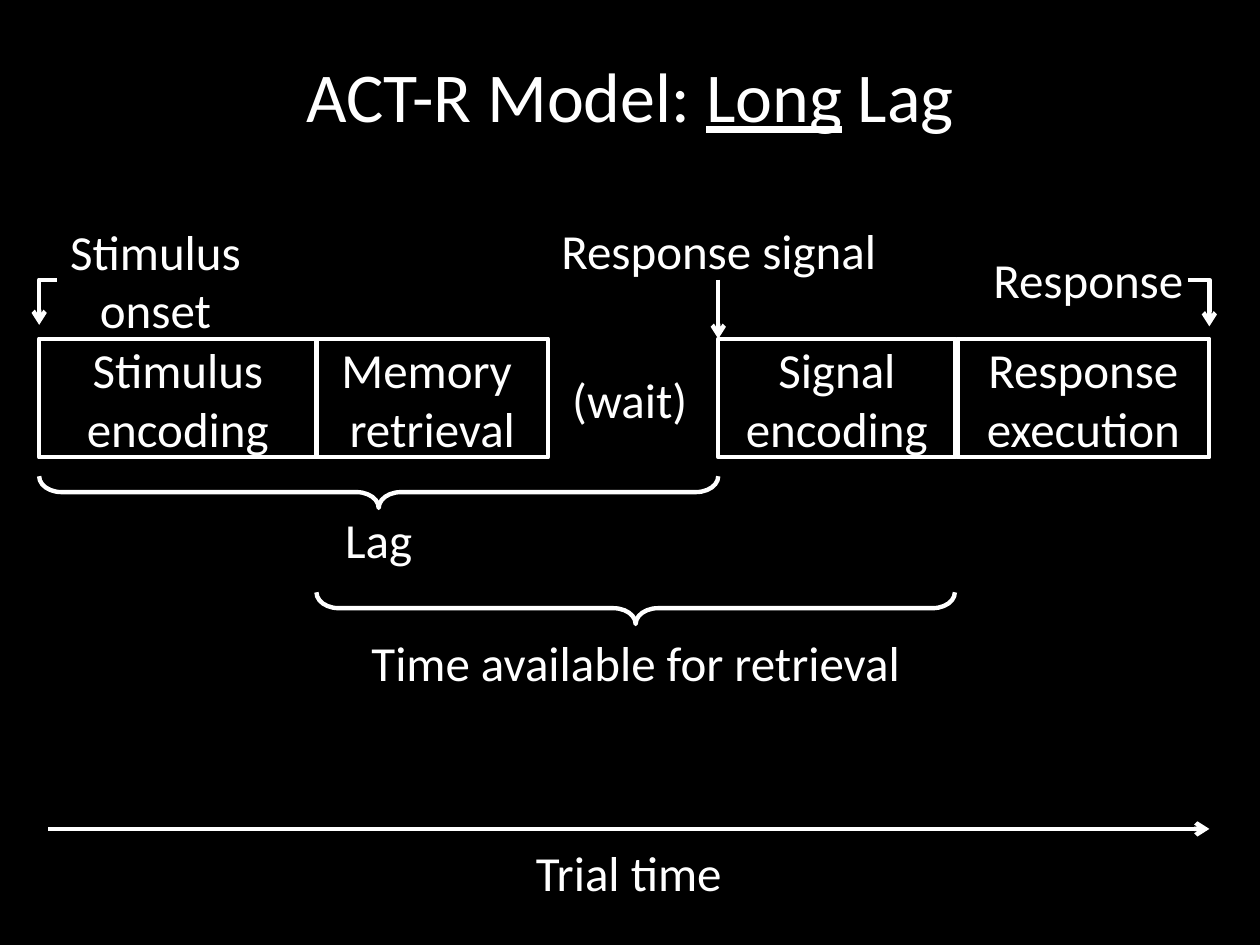
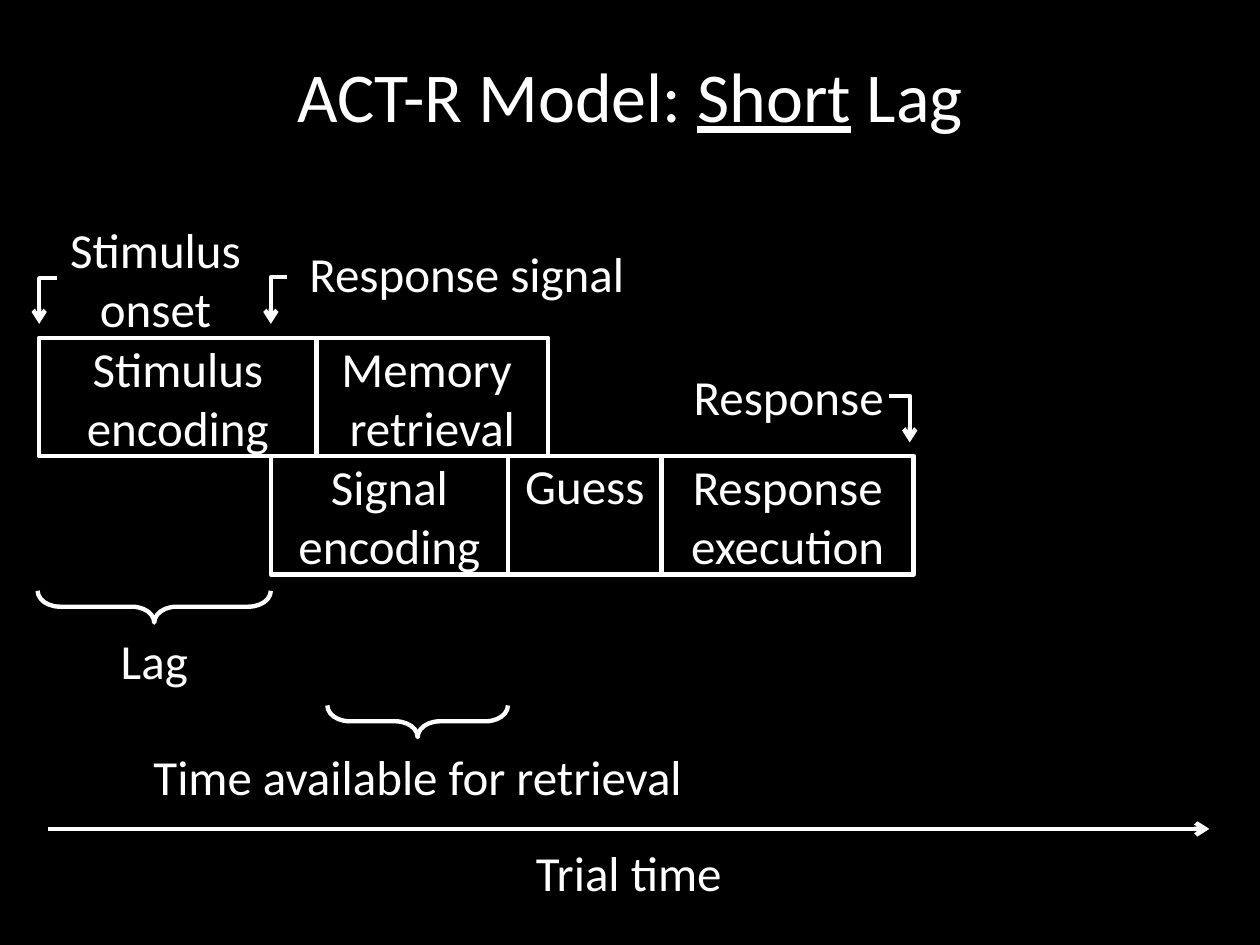
"""Build two slides that show the trial timeline of a long and a short lag."""
from dataclasses import dataclass

from lxml import etree
from pptx import Presentation
from pptx.dml.color import RGBColor
from pptx.enum.shapes import MSO_CONNECTOR, MSO_SHAPE
from pptx.enum.text import MSO_ANCHOR, PP_ALIGN
from pptx.oxml.ns import qn
from pptx.util import Cm, Pt

RECT = MSO_SHAPE.RECTANGLE
BRACE = MSO_SHAPE.LEFT_BRACE
STRAIGHT, ELBOW = MSO_CONNECTOR.STRAIGHT, MSO_CONNECTOR.ELBOW
TOP, MIDDLE = MSO_ANCHOR.TOP, MSO_ANCHOR.MIDDLE
CENTER = PP_ALIGN.CENTER


@dataclass(frozen=True)
class Theme:
    """Colours, font and sizes of the deck."""
    back: RGBColor = RGBColor(0, 0, 0)
    ink: RGBColor = RGBColor(255, 255, 255)
    font: str = "Calibri"
    title: Pt = Pt(40)
    body: Pt = Pt(28)
    line: Pt = Pt(2.5)


THEME = Theme()
WIDE, HIGH = 25.4, 19.05
ROW, LINE, DEPTH = 2.39, 1.19, 0.64
EDGE, END = 0.79, 24.38

STIM = ("Stimulus encoding", 5.59)
RECALL = ("Memory \nretrieval", 4.67)
SIGNAL = ("Signal encoding", 4.78)
GUESS = ("Guess", 3.1)
REPLY = ("Response execution", 5.08)
LAG = ("Lag", 2.11)
SPAN = ("Time available for retrieval", 12.34)

AXIS = (0.97, 16.71, END, 16.71)
TIME = ("Trial time", 9.68, 16.99, 5.99, LINE)

SLIDES = [
    {
        "word": "Long",
        "rows": [
            (EDGE, 6.83, [STIM, RECALL]),
            (14.48, 6.83, [SIGNAL]),
            (19.3, 6.83, [REPLY]),
        ],
        "notes": [
            ("(wait)", 11.07, 7.44, 3.25, LINE),
            ("Stimulus onset", 1.14, 4.45, 3.99, ROW),
            ("Response", 19.91, 5.03, 4.06, LINE),
            ("Response signal", 11.25, 4.45, 6.48, LINE),
        ],
        "arrows": [
            (1.14, 5.64, EDGE, 6.55),
            (23.95, 5.64, END, 6.58),
            (14.48, 5.64, 14.48, 6.83),
        ],
        "braces": [
            (LAG, EDGE, 14.48, 9.6, 10.26),
            (SPAN, 6.38, 19.25, 11.94, 12.75),
        ],
    },
    {
        "word": "Short",
        "rows": [
            (EDGE, 6.81, [STIM, RECALL]),
            (5.46, 9.19, [SIGNAL, GUESS, REPLY]),
        ],
        "notes": [
            ("Stimulus onset", 1.14, 4.42, 3.99, ROW),
            ("Response", 13.87, 7.39, 4.06, LINE),
            ("Response signal", 6.17, 4.9, 6.48, LINE),
        ],
        "arrows": [
            (1.14, 5.61, EDGE, 6.53),
            (17.93, 7.98, 18.34, 8.92),
            (5.79, 5.59, 5.46, 6.53),
        ],
        "braces": [
            (LAG, 0.76, 5.46, 11.91, 12.7),
            (SPAN, 6.6, 10.24, 14.22, 15.04),
        ],
    },
]


def add_run(para, text, size, under=None):
    run = para.add_run()
    run.text = text
    run.font.name = THEME.font
    run.font.size = size
    run.font.color.rgb = THEME.ink
    run.font.underline = under


def fill_text(shape, text, anchor=MIDDLE):
    frame = shape.text_frame
    frame.word_wrap = True
    frame.vertical_anchor = anchor
    frame.margin_left = frame.margin_right = 0
    frame.margin_top = frame.margin_bottom = 0
    for i, part in enumerate(text.split("\n")):
        para = frame.add_paragraph() if i else frame.paragraphs[0]
        para.alignment = CENTER
        add_run(para, part, THEME.body)


def add_title(slide, word):
    box = slide.shapes.add_textbox(Cm(1.27), Cm(0.76), Cm(22.86), Cm(2.29))
    frame = box.text_frame
    frame.word_wrap = True
    frame.vertical_anchor = MIDDLE
    para = frame.paragraphs[0]
    para.alignment = CENTER
    add_run(para, "ACT-R Model: ", THEME.title)
    add_run(para, word, THEME.title, True)
    add_run(para, " Lag", THEME.title)


def add_note(slide, text, left, top, wide, high):
    box = slide.shapes.add_textbox(Cm(left), Cm(top), Cm(wide), Cm(high))
    fill_text(box, text)


def add_form(slide, kind, left, top, wide, high):
    form = slide.shapes.add_shape(kind, Cm(left), Cm(top), Cm(wide), Cm(high))
    form.shadow.inherit = False
    form.fill.background()
    form.line.color.rgb = THEME.ink
    form.line.width = THEME.line
    return form


def add_row(slide, left, top, stages):
    for stage in stages:
        text, wide = stage
        box = add_form(slide, RECT, left, top, wide, ROW)
        fill_text(box, text, TOP if stage is GUESS else MIDDLE)
        left += wide


def add_brace(slide, label, left, right, top, below):
    text, wide = label
    mid, size = (left + right) / 2, right - left
    brace = add_form(slide, BRACE, mid - DEPTH / 2,
                     top + (DEPTH - size) / 2, DEPTH, size)
    brace.rotation = 270
    brace.adjustments[0] = 0.7
    add_note(slide, text, mid - wide / 2, below, wide, LINE)


def add_arrow(slide, x1, y1, x2, y2):
    bent = x1 != x2 and y1 != y2
    back = bent and x2 < x1
    ends = (x2, y2, x1, y1) if back else (x1, y1, x2, y2)
    arrow = slide.shapes.add_connector(ELBOW if bent else STRAIGHT,
                                       *map(Cm, ends))
    arrow.line.color.rgb = THEME.ink
    arrow.line.width = THEME.line
    props = arrow._element.spPr
    if bent:
        props.find(qn("a:prstGeom")).set("prst", "bentConnector2")
    if back:
        props.find(qn("a:xfrm")).set("rot", "10800000")
    etree.SubElement(props.find(qn("a:ln")), qn("a:tailEnd"), type="arrow")
    etree.SubElement(props, qn("a:effectLst"))


def main():
    deck = Presentation()
    deck.slide_width, deck.slide_height = Cm(WIDE), Cm(HIGH)
    ground = deck.slide_master.background.fill
    ground.solid()
    ground.fore_color.rgb = THEME.back
    for plan in SLIDES:
        slide = deck.slides.add_slide(deck.slide_layouts[6])
        add_title(slide, plan["word"])
        for row in plan["rows"]:
            add_row(slide, *row)
        for note in plan["notes"] + [TIME]:
            add_note(slide, *note)
        for arrow in plan["arrows"] + [AXIS]:
            add_arrow(slide, *arrow)
        for brace in plan["braces"]:
            add_brace(slide, *brace)
    deck.save("out.pptx")


if __name__ == "__main__":
    main()
